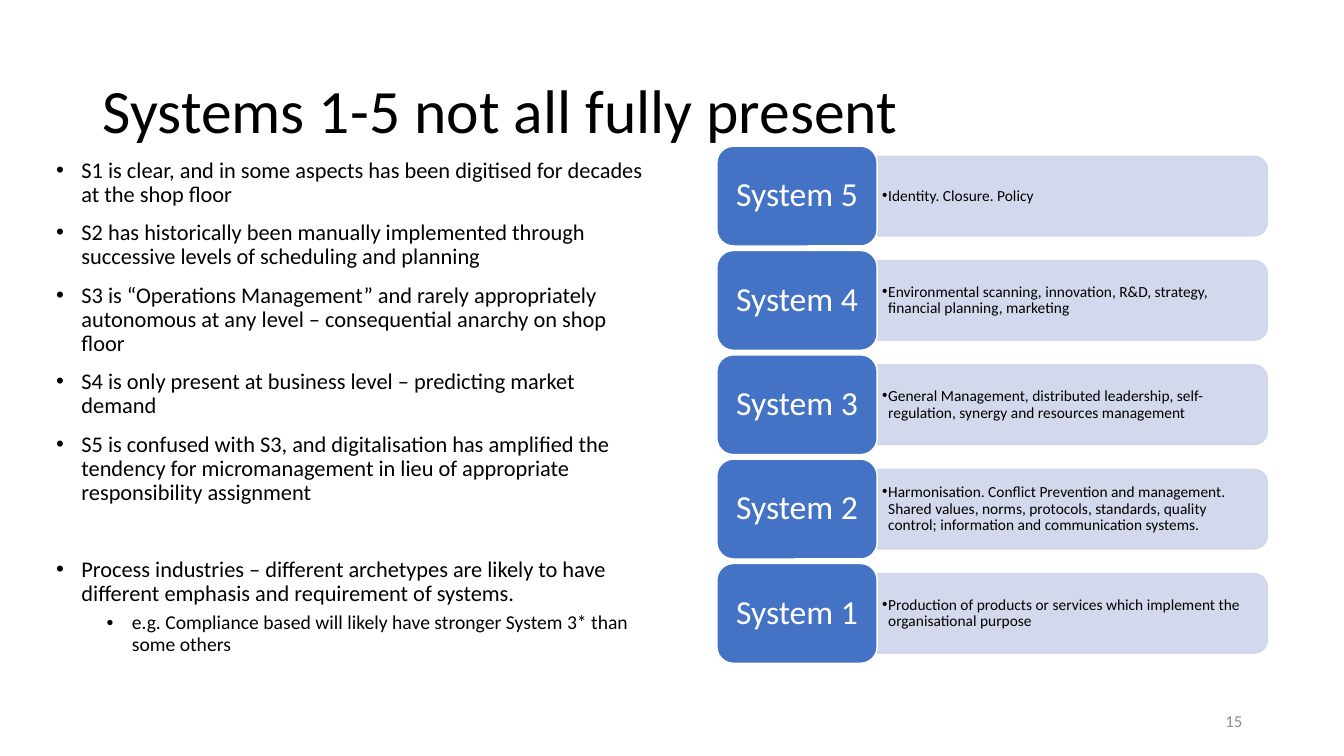
from lxml import etree
from pptx import Presentation
from pptx.dml.color import RGBColor
from pptx.enum.shapes import MSO_SHAPE
from pptx.enum.text import MSO_ANCHOR, MSO_AUTO_SIZE, PP_ALIGN
from pptx.oxml.ns import qn
from pptx.util import Inches, Pt

BLACK = RGBColor(0x00, 0x00, 0x00)
WHITE = RGBColor(0xFF, 0xFF, 0xFF)
GREY = RGBColor(0x8C, 0x8C, 0x8C)
BLUE = RGBColor(0x44, 0x72, 0xC4)
PALE_BLUE = RGBColor(0xCF, 0xD5, 0xEA)
ROUNDED = MSO_SHAPE.ROUNDED_RECTANGLE
ROUNDED_TOP = MSO_SHAPE.ROUND_2_SAME_RECTANGLE
MIDDLE = MSO_ANCHOR.MIDDLE
NO_AUTOFIT = MSO_AUTO_SIZE.NONE
LEFT, CENTER, RIGHT = PP_ALIGN.LEFT, PP_ALIGN.CENTER, PP_ALIGN.RIGHT


def set_text(paragraph, text, size, color, align=LEFT, spacing=0.9):
    paragraph.text = text
    paragraph.alignment = align
    paragraph.line_spacing = spacing
    paragraph.font.name = "Calibri"
    paragraph.font.size = Pt(size)
    paragraph.font.color.rgb = color


def add_bullet(paragraph, margin, hanging):
    properties = paragraph._p.get_or_add_pPr()
    properties.set("marL", str(Inches(margin)))
    properties.set("indent", str(-Inches(hanging)))
    etree.SubElement(properties, qn("a:buFont")).set("typeface", "Arial")
    etree.SubElement(properties, qn("a:buChar")).set("char", "•")


prs = Presentation()
prs.slide_width, prs.slide_height = Inches(13.33), Inches(7.5)
slide = prs.slides.add_slide(prs.slide_layouts[5])
shapes = slide.shapes

# Title
title = shapes.title
title.left, title.top = Inches(0.92), Inches(0.4)
title.width, title.height = Inches(11.5), Inches(1.45)
title.text_frame.auto_size = NO_AUTOFIT
title.text_frame.vertical_anchor = MIDDLE
set_text(title.text_frame.paragraphs[0], "Systems 1-5 not all fully present", 44, BLACK)

# Observations: text, size, left margin, space before
observations = [
    ("S1 is clear, and in some aspects has been digitised for decades at the shop floor",
     16, 0.25, 0),
    ("S2 has historically been manually implemented through successive levels of "
     "scheduling and planning", 16, 0.25, 10),
    ("S3 is “Operations Management” and rarely appropriately autonomous at any level – "
     "consequential anarchy on shop floor", 16, 0.25, 10),
    ("S4 is only present at business level – predicting market demand", 16, 0.25, 10),
    ("S5 is confused with S3, and digitalisation has amplified the tendency for "
     "micromanagement in lieu of appropriate responsibility assignment", 16, 0.25, 10),
    ("Process industries – different archetypes are likely to have different emphasis "
     "and requirement of systems.", 16, 0.25, 37.5),
    ("e.g. Compliance based will likely have stronger System 3* than some others",
     14, 0.75, 5),
]
body = shapes.add_textbox(Inches(0.46), Inches(1.53), Inches(6.04), Inches(5.13)).text_frame
body.word_wrap = True
for index, (text, size, margin, space) in enumerate(observations):
    paragraph = body.add_paragraph() if index else body.paragraphs[0]
    add_bullet(paragraph, margin, 0.25)
    set_text(paragraph, text, size, BLACK)
    if space:
        paragraph.space_before = Pt(space)
    paragraph.level = 1 if margin > 0.25 else 0

# Systems, from the top down
systems = [
    ("System 5", "Identity. Closure. Policy"),
    ("System 4", "Environmental scanning, innovation, R&D, strategy, financial planning, "
                 "marketing"),
    ("System 3", "General Management, distributed leadership, self-regulation, synergy and "
                 "resources management"),
    ("System 2", "Harmonisation. Conflict Prevention and management. Shared values, norms, "
                 "protocols, standards, quality control; information and communication "
                 "systems."),
    ("System 1", "Production of products or services which implement the organisational "
                 "purpose"),
]
ROW_TOP, ROW_PITCH = 1.45, 1.035
LABEL_LEFT, LABEL_WIDTH, LABEL_HEIGHT = 7.11, 1.59, 0.99
BAND_LEFT, BAND_WIDTH, BAND_HEIGHT = LABEL_LEFT + LABEL_WIDTH, 3.87, 0.79

for row, (name, role) in enumerate(systems):
    top = ROW_TOP + row * ROW_PITCH
    middle = top + LABEL_HEIGHT / 2

    # Pale band, turned so that its rounded end faces right
    band = shapes.add_shape(
        ROUNDED_TOP,
        Inches(BAND_LEFT + (BAND_WIDTH - BAND_HEIGHT) / 2), Inches(middle - BAND_WIDTH / 2),
        Inches(BAND_HEIGHT), Inches(BAND_WIDTH))
    band.rotation = 90
    band.shadow.inherit = False
    band.line.width = Pt(1)
    for fill in (band.fill, band.line.fill):
        fill.solid()
        fill.fore_color.rgb = PALE_BLUE
    for color in band._element.spPr.iter(qn("a:srgbClr")):
        etree.SubElement(color, qn("a:alpha")).set("val", "90000")

    # Role of the system
    role_frame = shapes.add_textbox(
        Inches(BAND_LEFT), Inches(middle - 0.355), Inches(3.83), Inches(0.71)).text_frame
    role_frame.word_wrap = True
    role_frame.vertical_anchor = MIDDLE
    role_frame.margin_left = role_frame.margin_right = Inches(0.05)
    role_frame.margin_top = role_frame.margin_bottom = Inches(0.02)
    add_bullet(role_frame.paragraphs[0], 0.06, 0.06)
    set_text(role_frame.paragraphs[0], role, 11, BLACK)

    # System label
    label = shapes.add_shape(ROUNDED, Inches(LABEL_LEFT), Inches(top),
                             Inches(LABEL_WIDTH), Inches(LABEL_HEIGHT))
    label.shadow.inherit = False
    label.fill.solid()
    label.fill.fore_color.rgb = BLUE
    label.line.color.rgb = WHITE
    label.line.width = Pt(1)
    label.text_frame.word_wrap = True
    label.text_frame.vertical_anchor = MIDDLE
    label.text_frame.margin_left = label.text_frame.margin_right = Inches(0.05)
    set_text(label.text_frame.paragraphs[0], name, 24, WHITE, CENTER)

# Slide number
number = shapes.add_textbox(Inches(9.42), Inches(6.95), Inches(3), Inches(0.4)).text_frame
number.word_wrap = True
number.vertical_anchor = MIDDLE
set_text(number.paragraphs[0], "15", 12, GREY, RIGHT, 1.0)

prs.save("out.pptx")
